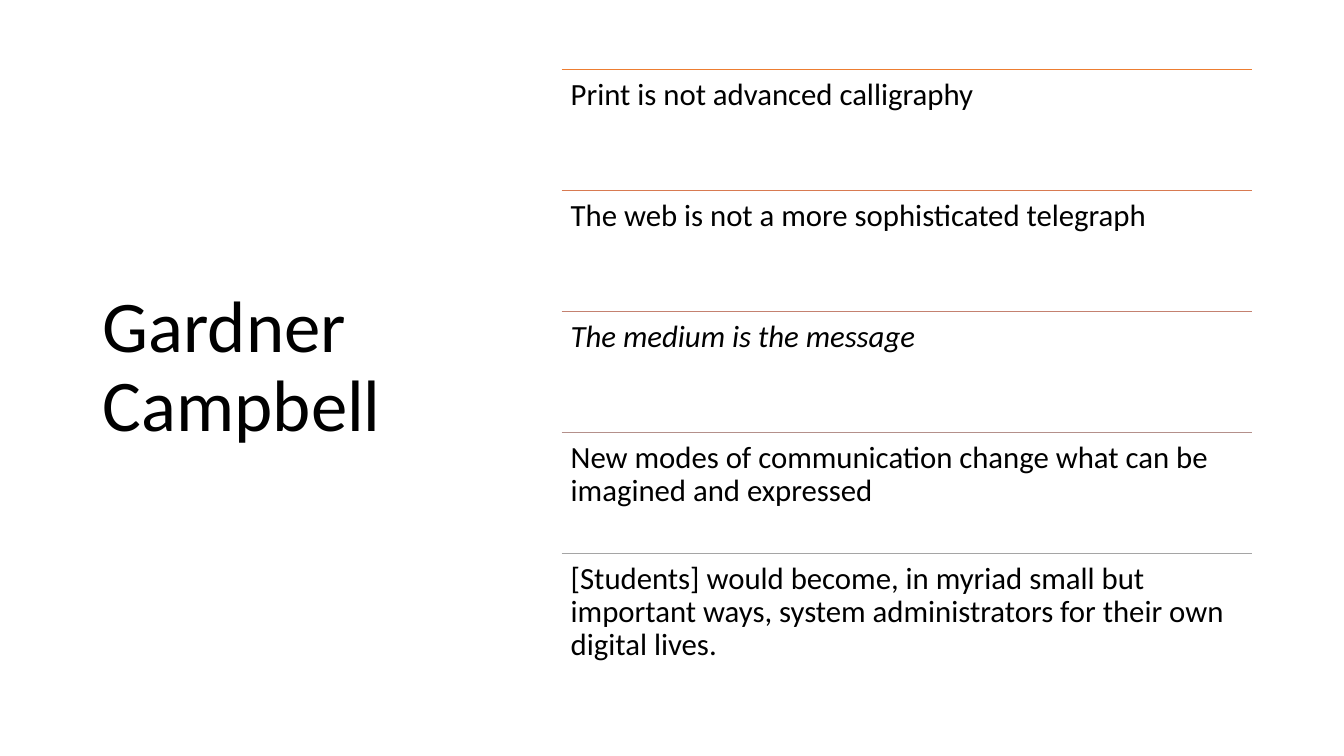
from lxml.etree import SubElement
from pptx import Presentation
from pptx.dml.color import RGBColor
from pptx.enum.shapes import MSO_CONNECTOR
from pptx.enum.text import MSO_ANCHOR, MSO_AUTO_SIZE, PP_ALIGN
from pptx.oxml.ns import qn
from pptx.util import Pt

PX = 9144  # 100 px to the inch
LEFT, TOP, WIDTH, ROW_HEIGHT, INSET = 557, 69, 685, 120, 9
QUOTES = [
    ("Print is not advanced calligraphy", "ED7D31", False),
    ("The web is not a more sophisticated telegraph", "D87A51", False),
    ("The medium is the message", "C48170", True),
    ("New modes of communication change what can be imagined and expressed",
     "B4908B", False),
    ("[Students] would become, in myriad small but important ways, "
     "system administrators for their own digital lives.", "A5A5A5", False),
]


def color(hex_string):
    return RGBColor.from_string(hex_string)


def write(frame, text, size, italic=False):
    """Fill the frame with one left-aligned paragraph in black Calibri."""
    frame.word_wrap = True
    frame.auto_size = MSO_AUTO_SIZE.NONE
    para = frame.paragraphs[0]
    para.alignment = PP_ALIGN.LEFT
    para.line_spacing = 0.9
    span = para.add_run()
    span.text = text
    span.font.name = "Calibri"
    span.font.size = Pt(size)
    span.font.italic = italic
    span.font.color.rgb = color("000000")


deck = Presentation()
deck.slide_width, deck.slide_height = 1333 * PX, 750 * PX
page = deck.slides.add_slide(deck.slide_layouts[5])
page.background.fill.solid()
page.background.fill.fore_color.rgb = color("FFFFFF")

title = page.shapes.title
title.left, title.top, title.width, title.height = 92 * PX, 61 * PX, 369 * PX, 609 * PX
title.text_frame.vertical_anchor = MSO_ANCHOR.MIDDLE
write(title.text_frame, "Gardner Campbell", 52)

for row, (quote, line_color, italic) in enumerate(QUOTES):
    top = TOP + row * ROW_HEIGHT
    rule = page.shapes.add_connector(
        MSO_CONNECTOR.STRAIGHT, LEFT * PX, top * PX, (LEFT + WIDTH) * PX, top * PX)
    rule.line.color.rgb = color(line_color)
    rule.line.width = Pt(1)
    SubElement(rule._element.spPr, qn("a:effectLst"))

    box = page.shapes.add_textbox(LEFT * PX, top * PX, WIDTH * PX, ROW_HEIGHT * PX)
    frame = box.text_frame
    frame.margin_left = frame.margin_right = INSET * PX
    frame.margin_top = frame.margin_bottom = INSET * PX
    write(frame, quote, 22, italic)

deck.save("out.pptx")
